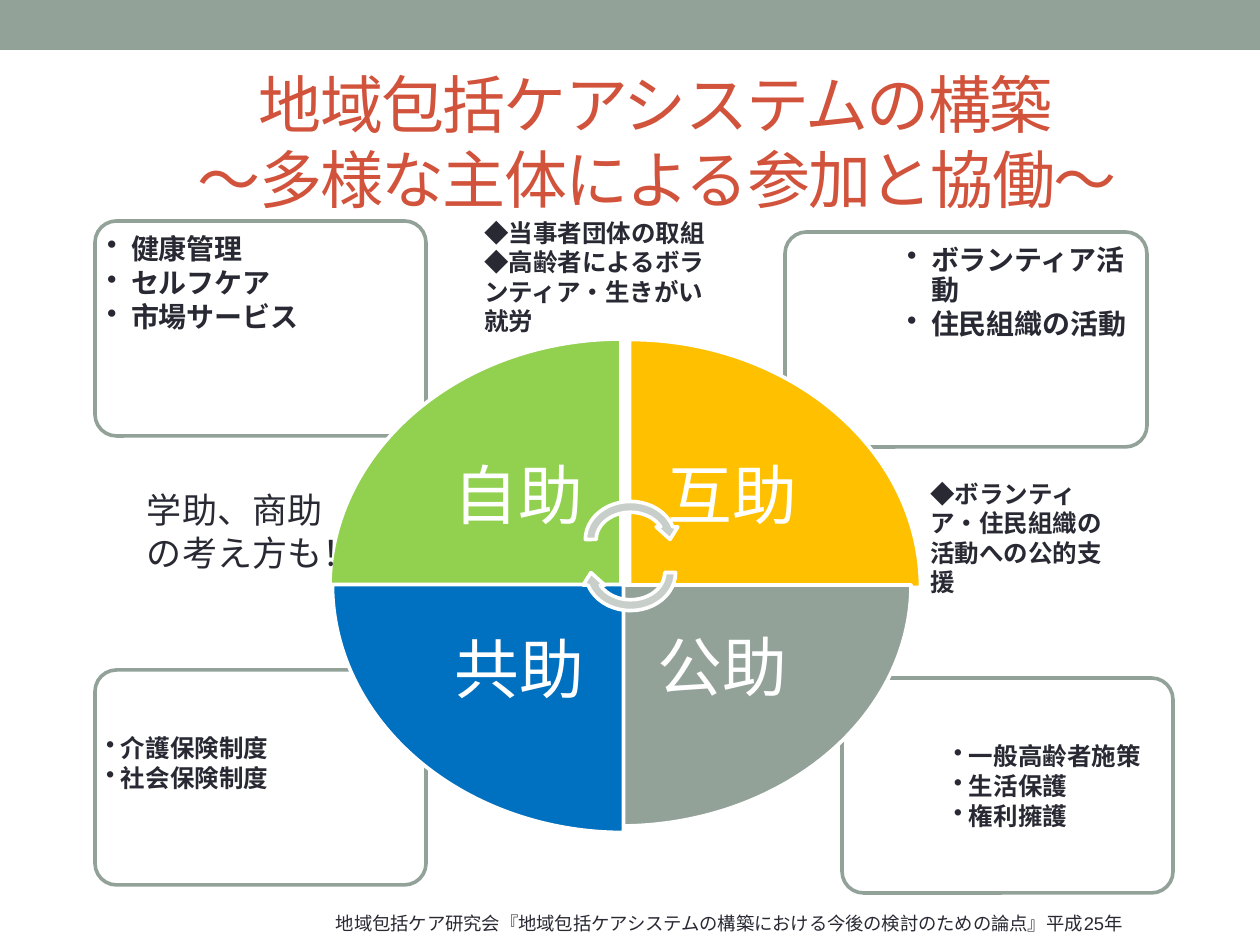
"""Build a slide on the four kinds of help in community-based integrated care."""
from lxml import etree
from pptx import Presentation
from pptx.dml.color import RGBColor
from pptx.enum.shapes import MSO_SHAPE
from pptx.enum.text import MSO_ANCHOR, PP_ALIGN
from pptx.oxml.ns import qn
from pptx.util import Pt

RECT = MSO_SHAPE.RECTANGLE
ROUND = MSO_SHAPE.ROUNDED_RECTANGLE
WEDGE = MSO_SHAPE.PIE_WEDGE
ARROW = MSO_SHAPE.CIRCULAR_ARROW
TOP, MIDDLE = MSO_ANCHOR.TOP, MSO_ANCHOR.MIDDLE
LEFT, CENTER = PP_ALIGN.LEFT, PP_ALIGN.CENTER
WHITE = RGBColor(0xFF, 0xFF, 0xFF)
SAGE = RGBColor(0x93, 0xA2, 0x99)
PALE = RGBColor(0xC8, 0xCE, 0xCA)
RUST = RGBColor(0xD2, 0x53, 0x3C)
INK = RGBColor(0x29, 0x29, 0x34)
GREEN = RGBColor(0x92, 0xD0, 0x50)
GOLD = RGBColor(0xFF, 0xC0, 0x00)
BLUE = RGBColor(0x00, 0x70, 0xC0)
PX = 914400 / 126

deck = Presentation()
deck.slide_width, deck.slide_height = round(1260 * PX), round(945 * PX)
slide = deck.slides.add_slide(deck.slide_layouts[6])


def draw(kind, at, fill, line=None, turn=0):
    shape = slide.shapes.add_shape(kind, *[round(v * PX) for v in at])
    shape.shadow.inherit = False
    shape.rotation = turn
    shape.fill.solid()
    shape.fill.fore_color.rgb = fill
    if line is None:
        shape.line.fill.background()
    else:
        shape.line.color.rgb = line
        shape.line.width = Pt(2.08)
    return shape


def write(at, lines, size, color=INK, bold=False, pad=(13, 6),
          anchor=TOP, align=LEFT, space=None, after=0):
    box = slide.shapes.add_textbox(*[round(v * PX) for v in at])
    frame = box.text_frame
    frame.word_wrap = True
    frame.vertical_anchor = anchor
    frame.margin_left = frame.margin_right = round(pad[0] * PX)
    frame.margin_top = frame.margin_bottom = round(pad[1] * PX)
    frame.text = "\n".join(lines)
    for para in frame.paragraphs:
        para.alignment = align
        para.line_spacing = space
        para.space_after = Pt(after)
        para.font.name = "Arial"
        para.font.size = Pt(size)
        para.font.bold = bold
        para.font.color.rgb = color
    return frame.paragraphs


draw(RECT, (0, 0, 1260, 50), SAGE)
title = write((63, 73, 1134, 136),
              ["地域包括ケアシステムの構築", "～多様な主体による参加と協働～"],
              36, RUST, anchor=MIDDLE)
for para, indent in zip(title, (183, 122)):
    props = para._p.get_or_add_pPr()
    props.set("marL", str(round(indent * PX)))
    props.find(qn("a:defRPr")).set("spc", "-100")

cards = [
    ((842, 678, 331, 215), (946, 736, 223, 152), 14, 15, 8,
     ["一般高齢者施策", "生活保護", "権利擁護"]),
    ((95, 670, 331, 215), (98, 728, 223, 152), 14, 15, 8,
     ["介護保険制度", "社会保険制度"]),
    ((785, 232, 362, 215), (898, 237, 243, 152), 16, 24, 9,
     ["ボランティア活動", "住民組織の活動"]),
    ((95, 221, 331, 215), (98, 226, 223, 152), 16, 24, 9,
     ["健康管理", "セルフケア", "市場サービス"]),
]
for frame, area, size, indent, pad, items in cards:
    card = draw(ROUND, frame, WHITE, SAGE)
    card.adjustments[0] = 0.1
    tint = card.fill._xPr.find(qn("a:solidFill"))[0]
    etree.SubElement(tint, qn("a:alpha"), val="90000")
    for para in write(area, items, size, bold=True, pad=(pad, pad),
                      space=0.9, after=size * 0.15):
        para.level = 1
        props = para._p.get_or_add_pPr()
        props.set("marL", str(round(indent * PX)))
        props.set("indent", str(round(-indent * PX)))
        mark = etree.Element(qn("a:buChar"), char="•")
        props.find(qn("a:defRPr")).addprevious(mark)

wedges = [
    ((330, 339, 291, 248), 0, GREEN, (416, 411, 205, 175), "自助"),
    ((651, 318, 248, 291), 90, GOLD, (630, 411, 205, 175), "互助"),
    ((620, 585, 291, 241), 180, SAGE, (620, 585, 205, 170), "公助"),
    ((354, 563, 248, 291), 270, BLUE, (417, 585, 205, 175), "共助"),
]
for frame, turn, fill, area, label in wedges:
    draw(WEDGE, frame, fill, WHITE, turn)
    write(area, [label], 37, WHITE, pad=(36, 36), anchor=MIDDLE,
          align=CENTER, space=0.9, after=13)

for top, turn in ((496, 0), (529, 180)):
    draw(ARROW, (580, top, 101, 87), PALE, WHITE, turn)

notes = [
    ((323, 906, 873, 35), 10.5, False,
     "地域包括ケア研究会『地域包括ケアシステムの構築における今後の検討のための論点』平成25年"),
    ((917, 473, 219, 102), 14, True,
     "◆ボランティア・住民組織の活動への公的支援"),
    ((471, 212, 268, 102), 14, True,
     "◆当事者団体の取組◆高齢者によるボランティア・生きがい就労"),
    ((134, 483, 218, 140), 20, False, "学助、商助の考え方も！"),
]
for area, size, bold, words in notes:
    write(area, [words], size, bold=bold)

deck.save("out.pptx")
